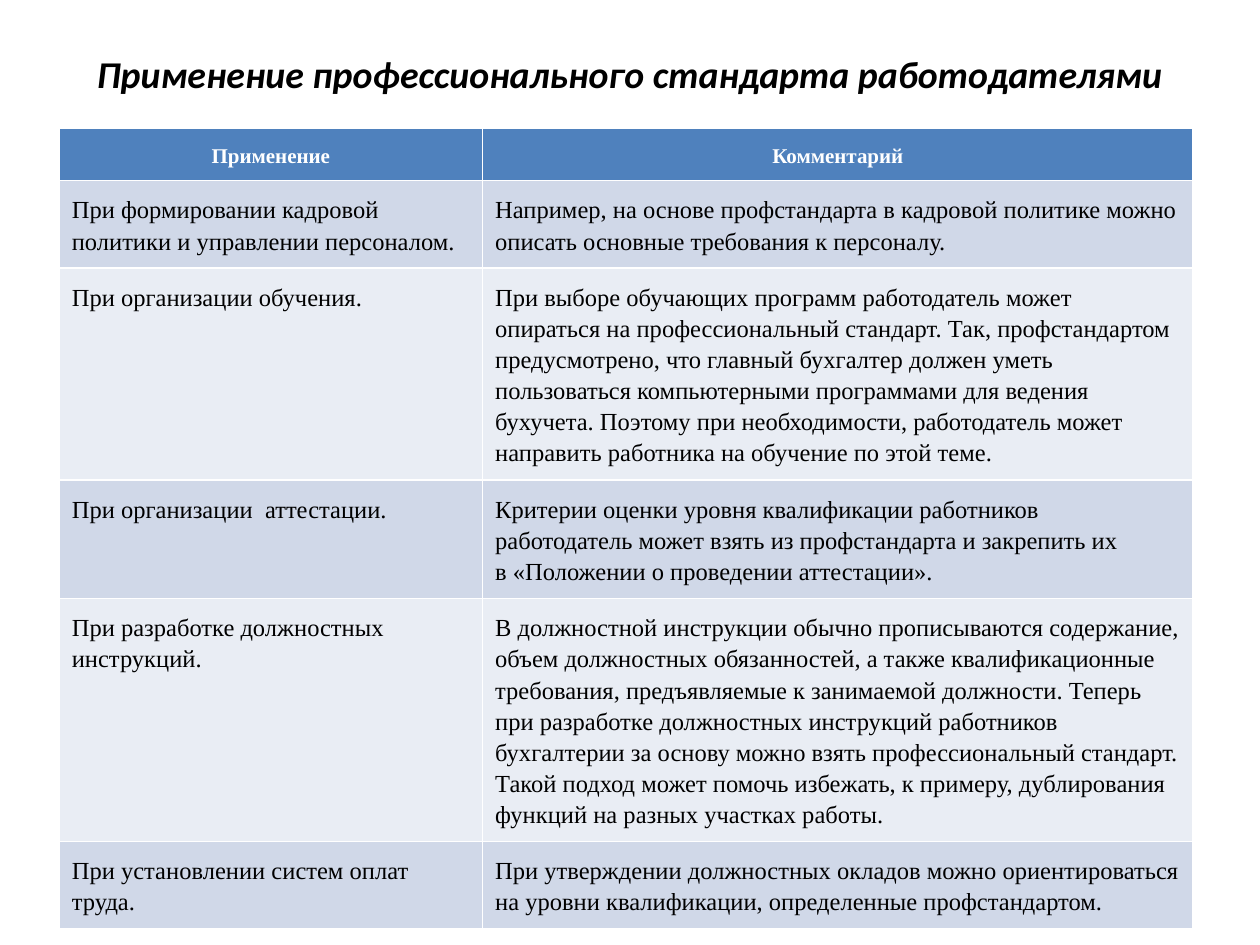
"""Builds a slide with a table on how employers apply a professional standard."""
from typing import NamedTuple

from pptx import Presentation
from pptx.dml.color import RGBColor
from pptx.enum.text import MSO_ANCHOR, PP_ALIGN
from pptx.util import Inches, Pt

CENTER, LEFT = PP_ALIGN.CENTER, PP_ALIGN.LEFT
MIDDLE, TOP = MSO_ANCHOR.MIDDLE, MSO_ANCHOR.TOP
COLORS = {
    "black": "000000",
    "white": "FFFFFF",
    "header": "4F81BD",
    "odd_row": "D0D8E8",
    "even_row": "E9EDF4",
}
COLUMN_WIDTHS = (3.36, 5.64)
ROW_HEIGHT = 0.41
CELL_MARGIN = 0.1
LINE_PITCH = 1.27
TIE, NO_BREAK_SPACE = "~", chr(160)


class Usage(NamedTuple):
    """One table row: where the standard is applied and a comment."""

    application: str
    comment: str


USAGES = (
    Usage("Применение", "Комментарий"),
    Usage(
        "При~формировании кадровой политики и~управлении персоналом.",
        "Например, на~основе профстандарта в~кадровой политике можно описать "
        "основные требования к~персоналу.",
    ),
    Usage(
        "При~организации обучения.",
        "При~выборе обучающих программ работодатель может опираться "
        "на~профессиональный стандарт. Так, профстандартом предусмотрено, "
        "что~главный бухгалтер должен уметь пользоваться компьютерными "
        "программами для~ведения бухучета. Поэтому при~необходимости, "
        "работодатель может направить работника на~обучение по~этой теме.",
    ),
    Usage(
        "При~организации~ аттестации.",
        "Критерии оценки уровня квалификации работников работодатель может "
        "взять из~профстандарта и~закрепить их в~«Положении о~проведении "
        "аттестации».",
    ),
    Usage(
        "При~разработке должностных инструкций.",
        "В~должностной инструкции обычно прописываются содержание, объем "
        "должностных обязанностей, а~также квалификационные требования, "
        "предъявляемые к~занимаемой должности. Теперь при~разработке "
        "должностных инструкций работников бухгалтерии за~основу можно взять "
        "профессиональный стандарт. Такой подход может помочь избежать, "
        "к~примеру, дублирования функций на~разных участках работы.",
    ),
    Usage(
        "При~установлении систем оплат труда.",
        "При~утверждении должностных окладов можно ориентироваться на~уровни "
        "квалификации, определенные профстандартом.",
    ),
)


def write_text(text_frame, text: str, *, size: float, font: str = "Times New Roman",
               color: str = "black", bold: bool = False, italic: bool = False,
               align=LEFT, line_spacing=1.0, before: float = 0,
               after: float = 0) -> None:
    """Write one formatted paragraph, turning ties into no-break spaces."""
    paragraph = text_frame.paragraphs[0]
    paragraph.alignment = align
    paragraph.line_spacing = line_spacing
    paragraph.space_before, paragraph.space_after = Pt(before), Pt(after)
    run = paragraph.add_run()
    run.text = text.replace(TIE, NO_BREAK_SPACE)
    run.font.name, run.font.size = font, Pt(size)
    run.font.bold, run.font.italic = bold, italic
    run.font.color.rgb = RGBColor.from_string(COLORS[color])


def fill_cell(cell, text: str, row_index: int) -> None:
    """Format a cell by its row: header first, then alternating bands."""
    is_header = row_index == 0
    band = "odd_row" if row_index % 2 else "even_row"
    size = 12 if is_header else 14
    cell.margin_left = cell.margin_right = Inches(CELL_MARGIN)
    cell.margin_top = cell.margin_bottom = Inches(CELL_MARGIN)
    cell.vertical_anchor = TOP
    cell.fill.solid()
    cell.fill.fore_color.rgb = RGBColor.from_string(COLORS["header" if is_header else band])
    write_text(cell.text_frame, text, size=size,
               color="white" if is_header else "black", bold=is_header,
               align=CENTER if is_header else LEFT,
               line_spacing=Pt(size * LINE_PITCH), before=7.5, after=10.5)


def add_title(slide, text: str) -> None:
    """Add the centred slide title."""
    title = slide.shapes.add_textbox(Inches(0.5), Inches(0.3), Inches(9), Inches(0.56))
    title.text_frame.word_wrap = True
    title.text_frame.vertical_anchor = MIDDLE
    write_text(title.text_frame, text, size=21.6, font="Calibri", bold=True,
               italic=True, align=CENTER)


def add_usage_table(slide, usages: tuple[Usage, ...]) -> None:
    """Add the table of applications and comments."""
    table = slide.shapes.add_table(
        len(usages), len(COLUMN_WIDTHS), Inches(0.47), Inches(1.02),
        Inches(sum(COLUMN_WIDTHS)), Inches(ROW_HEIGHT * len(usages))).table
    for column, width in zip(table.columns, COLUMN_WIDTHS):
        column.width = Inches(width)
    for row_index, usage in enumerate(usages):
        table.rows[row_index].height = Inches(ROW_HEIGHT)
        for column_index, text in enumerate(usage):
            fill_cell(table.cell(row_index, column_index), text, row_index)


def main() -> None:
    """Build and save the presentation."""
    presentation = Presentation()
    presentation.slide_width, presentation.slide_height = Inches(10), Inches(7.5)
    slide = presentation.slides.add_slide(presentation.slide_layouts[6])
    add_title(slide, "Применение профессионального стандарта работодателями")
    add_usage_table(slide, USAGES)
    presentation.save("out.pptx")


if __name__ == "__main__":
    main()
